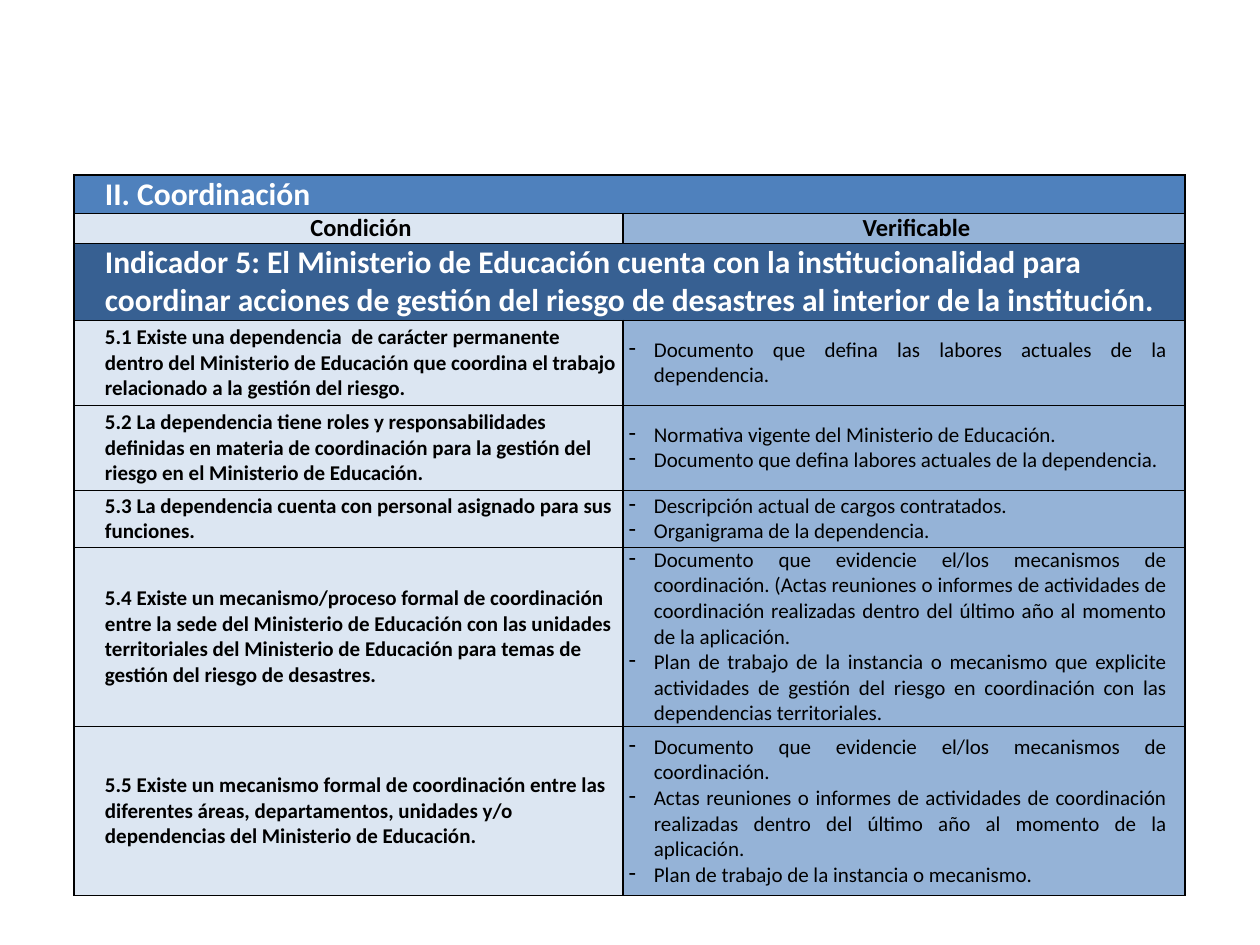
from lxml import etree
from pptx import Presentation
from pptx import util as u
from pptx.dml.color import RGBColor
from pptx.enum import text
from pptx.oxml.ns import qn

PX = u.Inches(1) // 126
WHITE, BLACK = "FFFFFF", "000000"
BLUE, NAVY, PALE, MID = "4F81BD", "376092", "DCE6F2", "95B3D7"

SECTION = "II. Coordinación"
HEADINGS = ["Condición", "Verificable"]
INDICATOR = ("Indicador 5: El Ministerio de Educación cuenta con la institucionalidad para "
             "coordinar acciones de gestión del riesgo de desastres al interior de la institución.")
CONDITIONS = [
    ("5.1 Existe una dependencia  de carácter permanente dentro del Ministerio de Educación "
     "que coordina el trabajo relacionado a la gestión del riesgo.",
     ["Documento que defina las labores actuales de la dependencia."]),
    ("5.2 La dependencia tiene roles y responsabilidades definidas en materia de coordinación "
     "para la gestión del riesgo en el Ministerio de Educación.",
     ["Normativa vigente del Ministerio de Educación.",
      "Documento que defina labores actuales de la dependencia."]),
    ("5.3 La dependencia cuenta con personal asignado para sus funciones.",
     ["Descripción actual de cargos contratados.",
      "Organigrama de la dependencia."]),
    ("5.4 Existe un mecanismo/proceso formal de coordinación entre la sede del Ministerio de "
     "Educación con las unidades territoriales del Ministerio de Educación para temas de "
     "gestión del riesgo de desastres.",
     ["Documento que evidencie el/los mecanismos de coordinación. (Actas reuniones o informes "
      "de actividades de coordinación realizadas dentro del último año al momento de la "
      "aplicación.",
      "Plan de trabajo de la instancia o mecanismo que explicite actividades de gestión del "
      "riesgo en coordinación con las dependencias territoriales."]),
    ("5.5 Existe un mecanismo formal de coordinación entre las diferentes áreas, "
     "departamentos, unidades y/o dependencias del Ministerio de Educación.",
     ["Documento que evidencie el/los mecanismos de coordinación.",
      "Actas reuniones o informes de actividades de coordinación realizadas dentro del último "
      "año al momento de la aplicación.",
      "Plan de trabajo de la instancia o mecanismo."]),
]
LEFT, TOP = 74, 175
COLUMNS = [549, 562]
ROWS = [38, 30, 77, 85, 85, 57, 179, 169]
INSET, INDENT = 6, 25


def rgb(value):
    return RGBColor.from_string(value)


def set_borders(cell):
    tc_pr = cell._tc.get_or_add_tcPr()
    for i, side in enumerate(("lnL", "lnR", "lnT", "lnB")):
        ln = etree.Element(qn(f"a:{side}"), w=str(u.Pt(1)))
        fill = etree.SubElement(ln, qn("a:solidFill"))
        etree.SubElement(fill, qn("a:srgbClr"), val=BLACK)
        tc_pr.insert(i, ln)


def fill_cell(cell, lines, fill, size=12, color=BLACK, bold=True, align="LEFT",
              bullet=None, right=INSET):
    cell.fill.solid()
    cell.fill.fore_color.rgb = rgb(fill)
    set_borders(cell)
    cell.vertical_anchor = text.MSO_ANCHOR.MIDDLE
    cell.margin_left, cell.margin_right = INSET * PX, right * PX
    cell.margin_top = cell.margin_bottom = 0
    tf = cell.text_frame
    for i, line in enumerate(lines):
        p = tf.paragraphs[0] if i == 0 else tf.add_paragraph()
        p.alignment = getattr(text.PP_ALIGN, align)
        p_pr = p._p.get_or_add_pPr()
        p_pr.set("marL", str(INDENT * PX))
        p_pr.set("indent", str(-INDENT * PX if bullet else 0))
        if bullet:
            etree.SubElement(p_pr, qn("a:buChar"), char=bullet)
        r = p.add_run()
        r.text = line
        r.font.name, r.font.size, r.font.bold = "Calibri", u.Pt(size), bold
        r.font.color.rgb = rgb(color)


def add_indicator_table(slide):
    frame = slide.shapes.add_table(len(ROWS), len(COLUMNS), LEFT * PX, TOP * PX,
                                   sum(COLUMNS) * PX, sum(ROWS) * PX)
    table = frame.table
    table.first_row = table.horz_banding = False
    for column, width in zip(table.columns, COLUMNS):
        column.width = width * PX
    for row, height in zip(table.rows, ROWS):
        row.height = height * PX

    for i, line, fill in ((0, SECTION, BLUE), (2, INDICATOR, NAVY)):
        table.cell(i, 0).merge(table.cell(i, 1))
        fill_cell(table.cell(i, 0), [line], fill, size=18, color=WHITE)
        fill_cell(table.cell(i, 1), [], fill)
    for j, (heading, fill) in enumerate(zip(HEADINGS, (PALE, MID))):
        fill_cell(table.cell(1, j), [heading], fill, size=14, align="CENTER")
    for i, (condition, evidence) in enumerate(CONDITIONS, start=3):
        fill_cell(table.cell(i, 0), [condition], PALE)
        fill_cell(table.cell(i, 1), evidence, MID, bold=False, align="JUSTIFY",
                  bullet="-", right=3 * INSET)


def main():
    prs = Presentation()
    prs.slide_width, prs.slide_height = u.Inches(10), u.Inches(7.5)
    add_indicator_table(prs.slides.add_slide(prs.slide_layouts[6]))
    prs.save("out.pptx")


if __name__ == "__main__":
    main()
